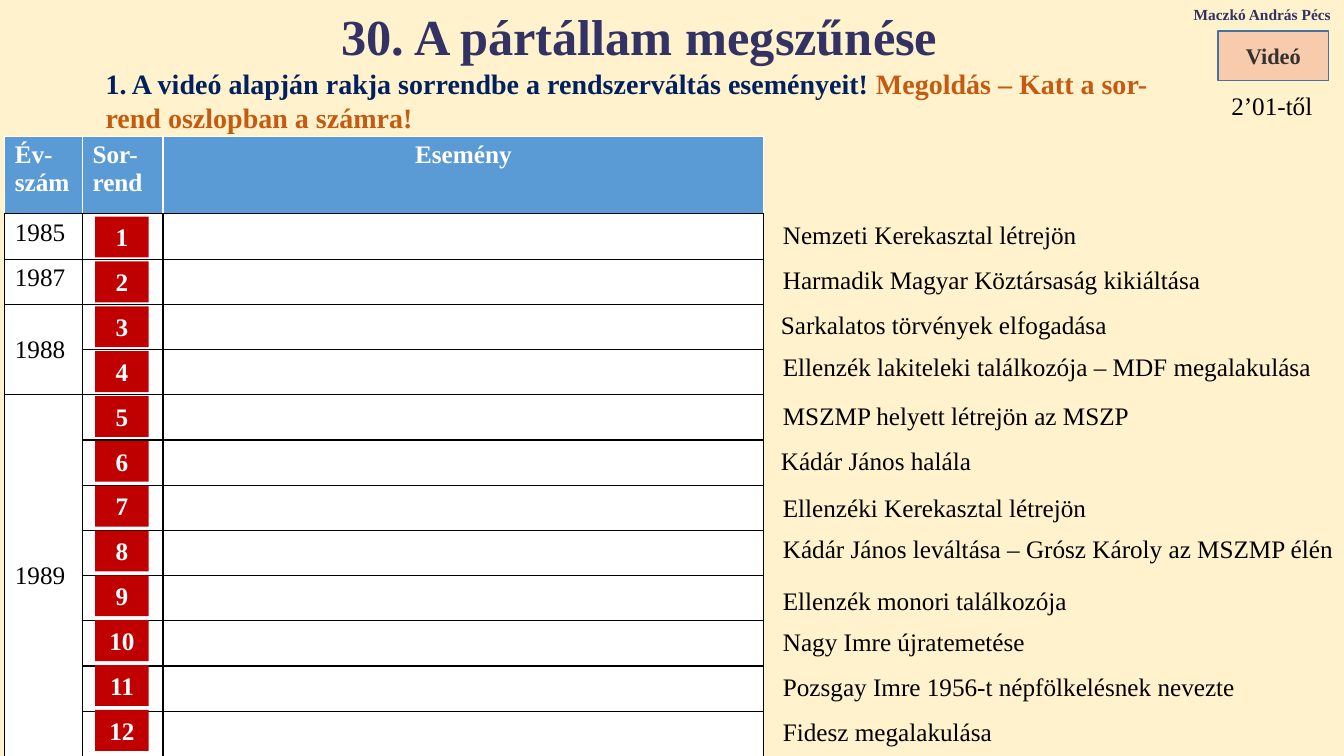
from dataclasses import dataclass

from lxml.etree import SubElement
from pptx import Presentation
from pptx.dml.color import RGBColor
from pptx.enum.shapes import MSO_SHAPE as Preset
from pptx.enum.text import MSO_ANCHOR as Anchor
from pptx.enum.text import MSO_AUTO_SIZE as AutoSize
from pptx.enum.text import PP_ALIGN as Align
from pptx.oxml.ns import qn
from pptx.shapes.autoshape import Shape
from pptx.slide import Slide
from pptx.table import _Cell as Cell
from pptx.text.text import TextFrame
from pptx.util import Cm, Pt

FONT = "Times New Roman"
BLACK = RGBColor(0x00, 0x00, 0x00)
WHITE = RGBColor(0xFF, 0xFF, 0xFF)
CREAM = RGBColor(0xFF, 0xF2, 0xCC)
INDIGO = RGBColor(0x32, 0x32, 0x64)
NAVY = RGBColor(0x00, 0x20, 0x60)
ORANGE = RGBColor(0xC5, 0x5A, 0x11)
HEADER_BLUE = RGBColor(0x5B, 0x9B, 0xD5)
PEACH = RGBColor(0xF8, 0xCB, 0xAD)
BUTTON_EDGE = RGBColor(0x43, 0x73, 0x9E)
CHARCOAL = RGBColor(0x32, 0x32, 0x32)
RED = RGBColor(0xC0, 0x00, 0x00)


@dataclass(frozen=True)
class Box:
    left: float
    top: float
    width: float
    height: float


@dataclass(frozen=True)
class Event:
    text: str
    top: float
    width: float
    left: float = 19.48


@dataclass(frozen=True)
class Year:
    label: str
    first_row: int
    last_row: int


HEADINGS = ("Év-szám", "Sor-rend", "Esemény")
COLUMN_WIDTHS = (1.96, 2.03, 15.14)
HEADER_HEIGHT = 1.96
ROW_HEIGHT = 1.14
STEP_COUNT = 12
TABLE_BOX = Box(0.12, 3.43, sum(COLUMN_WIDTHS), HEADER_HEIGHT + STEP_COUNT * ROW_HEIGHT)

YEARS = (
    Year("1985", 1, 1),
    Year("1987", 2, 2),
    Year("1988", 3, 4),
    Year("1989", 5, 12),
)

EVENTS = (
    Event("Nemzeti Kerekasztal létrejön", 5.41, 8.94),
    Event("Harmadik Magyar Köztársaság kikiáltása", 6.53, 11.3),
    Event("Sarkalatos törvények elfogadása", 7.67, 9.47, 19.43),
    Event("Ellenzék lakiteleki találkozója – MDF megalakulása", 8.74, 14.05),
    Event("MSZMP helyett létrejön az MSZP", 9.96, 9.47),
    Event("Kádár János halála", 11.1, 5.94, 19.43),
    Event("Ellenzéki Kerekasztal létrejön", 12.27, 8.94),
    Event("Kádár János leváltása – Grósz Károly az MSZMP élén", 13.31, 14.42),
    Event("Ellenzék monori találkozója", 14.63, 7.7),
    Event("Nagy Imre újratemetése", 15.67, 7.24),
    Event("Pozsgay Imre 1956-t népfölkelésnek nevezte", 16.79, 12.34),
    Event("Fidesz megalakulása", 17.93, 5.94),
)


def write(frame: TextFrame, text: str, *, size: float = 18, color: RGBColor = BLACK,
          bold: bool = False, align: Align = Align.LEFT) -> None:
    paragraph = frame.paragraphs[-1]
    paragraph.alignment = align
    run = paragraph.add_run()
    run.text = text
    run.font.name = FONT
    run.font.size = Pt(size)
    run.font.bold = bold
    run.font.color.rgb = color


def add_label(slide: Slide, box: Box) -> TextFrame:
    frame = slide.shapes.add_textbox(
        Cm(box.left), Cm(box.top), Cm(box.width), Cm(box.height)).text_frame
    frame.word_wrap = True
    frame.auto_size = AutoSize.SHAPE_TO_FIT_TEXT
    return frame


def add_button(slide: Slide, box: Box, fill: RGBColor, anchor: Anchor) -> Shape:
    button = slide.shapes.add_shape(
        Preset.RECTANGLE, Cm(box.left), Cm(box.top), Cm(box.width), Cm(box.height))
    button.shadow.inherit = False
    button.fill.solid()
    button.fill.fore_color.rgb = fill
    button.line.fill.background()
    button.text_frame.word_wrap = True
    button.text_frame.vertical_anchor = anchor
    return button


def style_cell(cell: Cell, fill: RGBColor, side: RGBColor, top: RGBColor) -> None:
    properties = cell._tc.get_or_add_tcPr()
    for edge, color in (("lnL", side), ("lnR", side), ("lnT", top), ("lnB", BLACK)):
        line = SubElement(properties, qn(f"a:{edge}"), w=str(Pt(1)))
        SubElement(SubElement(line, qn("a:solidFill")), qn("a:srgbClr"), val=str(color))
    cell.fill.solid()
    cell.fill.fore_color.rgb = fill


def add_timeline(slide: Slide) -> None:
    timeline = slide.shapes.add_table(
        STEP_COUNT + 1, len(HEADINGS), Cm(TABLE_BOX.left), Cm(TABLE_BOX.top),
        Cm(TABLE_BOX.width), Cm(TABLE_BOX.height)).table
    timeline.first_row = False
    timeline.horz_banding = False
    for column, width in zip(timeline.columns, COLUMN_WIDTHS):
        column.width = Cm(width)
    for index, row in enumerate(timeline.rows):
        row.height = Cm(ROW_HEIGHT if index else HEADER_HEIGHT)
        for cell in row.cells:
            if index == 0:
                style_cell(cell, HEADER_BLUE, WHITE, WHITE)
            else:
                style_cell(cell, WHITE, BLACK, BLACK)

    for index, heading in enumerate(HEADINGS):
        write(timeline.cell(0, index).text_frame, heading, color=WHITE, bold=True,
              align=Align.CENTER if heading == "Esemény" else Align.LEFT)
    for year in YEARS:
        year_cell = timeline.cell(year.first_row, 0)
        if year.last_row > year.first_row:
            year_cell.merge(timeline.cell(year.last_row, 0))
            year_cell.vertical_anchor = Anchor.MIDDLE
        write(year_cell.text_frame, year.label)


def main() -> None:
    deck = Presentation()
    deck.slide_width = Cm(33.87)
    deck.slide_height = Cm(19.05)
    slide = deck.slides.add_slide(deck.slide_layouts[6])
    slide.background.fill.solid()
    slide.background.fill.fore_color.rgb = CREAM

    add_timeline(slide)

    author = add_label(slide, Box(29.83, 0, 4.04, 0.73))
    write(author, "Maczkó András Pécs", size=11, color=INDIGO, bold=True)

    task = add_label(slide, Box(2.41, 1.55, 26.95, 1.96))
    write(task, "1. A videó alapján rakja sorrendbe a rendszerváltás eseményeit! ",
          size=20, color=NAVY, bold=True)
    write(task, "Megoldás – Katt a sor-rend oszlopban a számra!",
          size=20, color=ORANGE, bold=True)

    title = add_label(slide, Box(2.41, 0, 27.41, 1.8))
    write(title, "30. A pártállam megszűnése", size=36, color=INDIGO, bold=True,
          align=Align.CENTER)

    video = add_button(slide, Box(30.7, 0.78, 2.78, 1.25), PEACH, Anchor.MIDDLE)
    video.line.color.rgb = BUTTON_EDGE
    video.line.width = Pt(1)
    write(video.text_frame, "Videó", size=16, color=CHARCOAL, bold=True,
          align=Align.CENTER)
    write(add_label(slide, Box(30.78, 2.16, 3.09, 1.03)), "2’01-től")

    for event in EVENTS:
        write(add_label(slide, Box(event.left, event.top, event.width, 1.03)), event.text)

    for step in range(STEP_COUNT):
        badge = add_button(slide, Box(2.4, 5.46 + step * 1.13, 1.35, 1.03), RED, Anchor.TOP)
        write(badge.text_frame, str(step + 1), color=WHITE, bold=True, align=Align.CENTER)

    deck.save("out.pptx")


if __name__ == "__main__":
    main()
